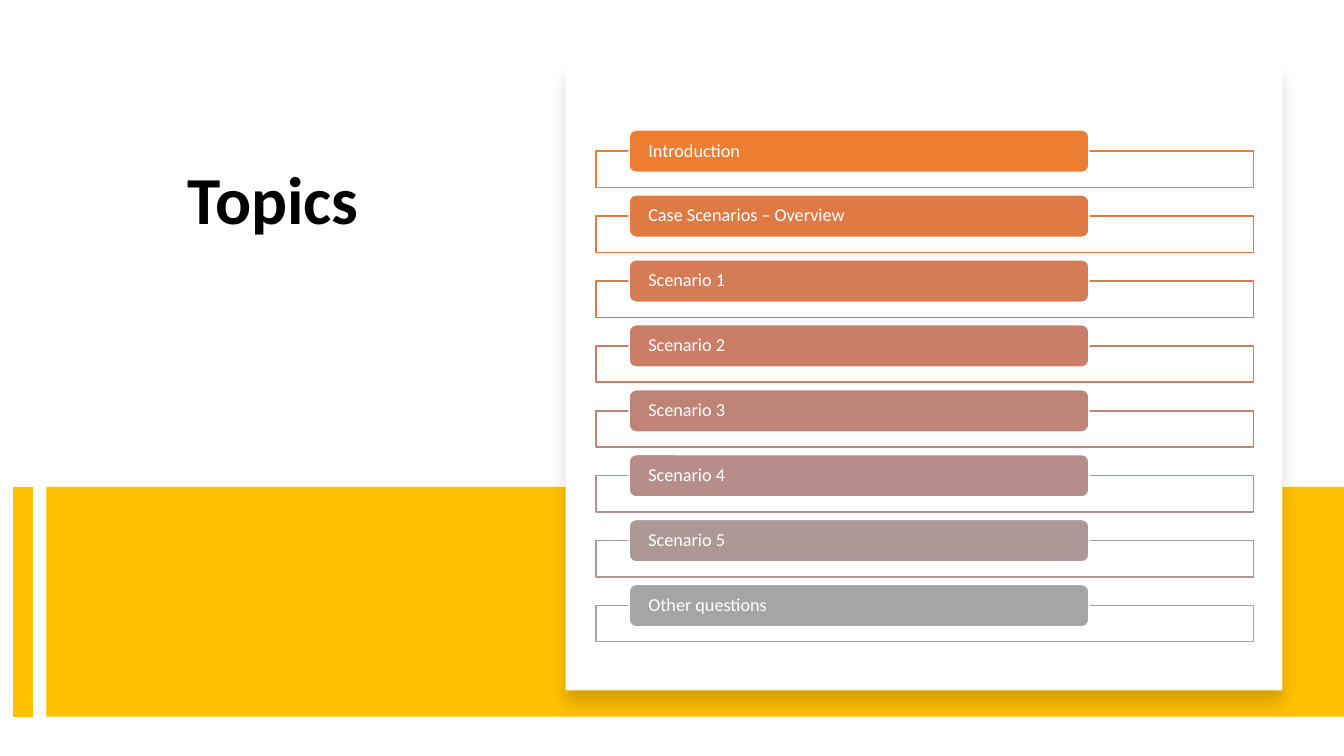
from lxml import etree
from pptx import Presentation
from pptx.dml.color import RGBColor
from pptx.enum import shapes, text
from pptx.oxml import ns
from pptx.util import Inches, Pt

TITLE = "Topics "
TOPICS = [
    ("Introduction\u00a0", "ED7D31"),
    ("Case Scenarios – Overview\u00a0", "E07A44"),
    ("Scenario 1", "D57B56"),
    ("Scenario 2", "CA7E67"),
    ("Scenario 3", "BF8478"),
    ("Scenario 4", "B68D88"),
    ("Scenario 5", "AD9897"),
    ("Other questions\u00a0", "A5A5A5"),
]
FONT, GOLD, WHITE, BLACK = "Calibri", "FFC000", "FFFFFF", "000000"
BAND_TOP, BAND_BOTTOM = 4.83, 7.11
FIRST_FRAME, FIRST_PILL, PITCH = 1.5, 1.29, 0.644
RECT = shapes.MSO_SHAPE.RECTANGLE
PILL = shapes.MSO_SHAPE.ROUNDED_RECTANGLE


def rgb(value):
    return RGBColor.from_string(value)


def add_box(s, kind, at, fill, line=None):
    sp = s.shapes.add_shape(kind, *map(Inches, at))
    sp.shadow.inherit = False
    sp.fill.solid()
    sp.fill.fore_color.rgb = rgb(fill)
    if line:
        sp.line.color.rgb = rgb(line)
        sp.line.width = Pt(1)
    else:
        sp.line.fill.background()
    return sp


def add_text(p, words, size, color, bold=False):
    p.line_spacing = 0.9
    r = p.add_run()
    r.text = words
    r.font.name = FONT
    r.font.size = Pt(size)
    r.font.bold = bold
    r.font.color.rgb = rgb(color)


def add_shadow(sp):
    effects = sp._element.spPr.find(ns.qn("a:effectLst"))
    shadow = etree.SubElement(effects, ns.qn("a:outerShdw"), blurRad=str(Pt(11)),
                              dist=str(Pt(10)), dir="5400000", algn="t", rotWithShape="0")
    color = etree.SubElement(shadow, ns.qn("a:srgbClr"), val=BLACK)
    etree.SubElement(color, ns.qn("a:alpha"), val="15000")


def add_title(s):
    title = s.shapes.title
    title.left, title.top, title.width, title.height = map(Inches, (0.71, 1.6, 4.15, 2.94))
    tf = title.text_frame
    tf.word_wrap = True
    tf.vertical_anchor = text.MSO_ANCHOR.TOP
    p = tf.paragraphs[0]
    p.alignment = text.PP_ALIGN.CENTER
    add_text(p, TITLE, 48, BLACK, True)


def add_band(s):
    add_box(s, RECT, (0.46, BAND_TOP, 12.87, BAND_BOTTOM - BAND_TOP), GOLD)
    bar = s.shapes.add_connector(shapes.MSO_CONNECTOR.STRAIGHT, Inches(0.23), Inches(BAND_TOP),
                                 Inches(0.23), Inches(BAND_BOTTOM))
    bar.line.color.rgb = rgb(GOLD)
    bar.line.width = Pt(14)
    etree.SubElement(bar._element.spPr, ns.qn("a:effectLst"))


def add_topic(s, i, words, color):
    add_box(s, RECT, (5.91, FIRST_FRAME + i * PITCH, 6.52, 0.36), WHITE, color)
    pill = add_box(s, PILL, (6.24, FIRST_PILL + i * PITCH, 4.56, 0.42), color, WHITE)
    tf = pill.text_frame
    tf.word_wrap = True
    tf.vertical_anchor = text.MSO_ANCHOR.MIDDLE
    tf.margin_left = tf.margin_right = Inches(0.17)
    tf.margin_top = tf.margin_bottom = 0
    p = tf.paragraphs[0]
    p.alignment = text.PP_ALIGN.LEFT
    add_text(p, words, 13, WHITE)


def main():
    prs = Presentation()
    prs.slide_width, prs.slide_height = Inches(13.33), Inches(7.5)
    s = prs.slides.add_slide(prs.slide_layouts[5])
    add_title(s)
    add_band(s)
    add_shadow(add_box(s, RECT, (5.61, 0.64, 7.11, 6.21), WHITE))
    for i, (words, color) in enumerate(TOPICS):
        add_topic(s, i, words, color)
    prs.save("out.pptx")


if __name__ == "__main__":
    main()
